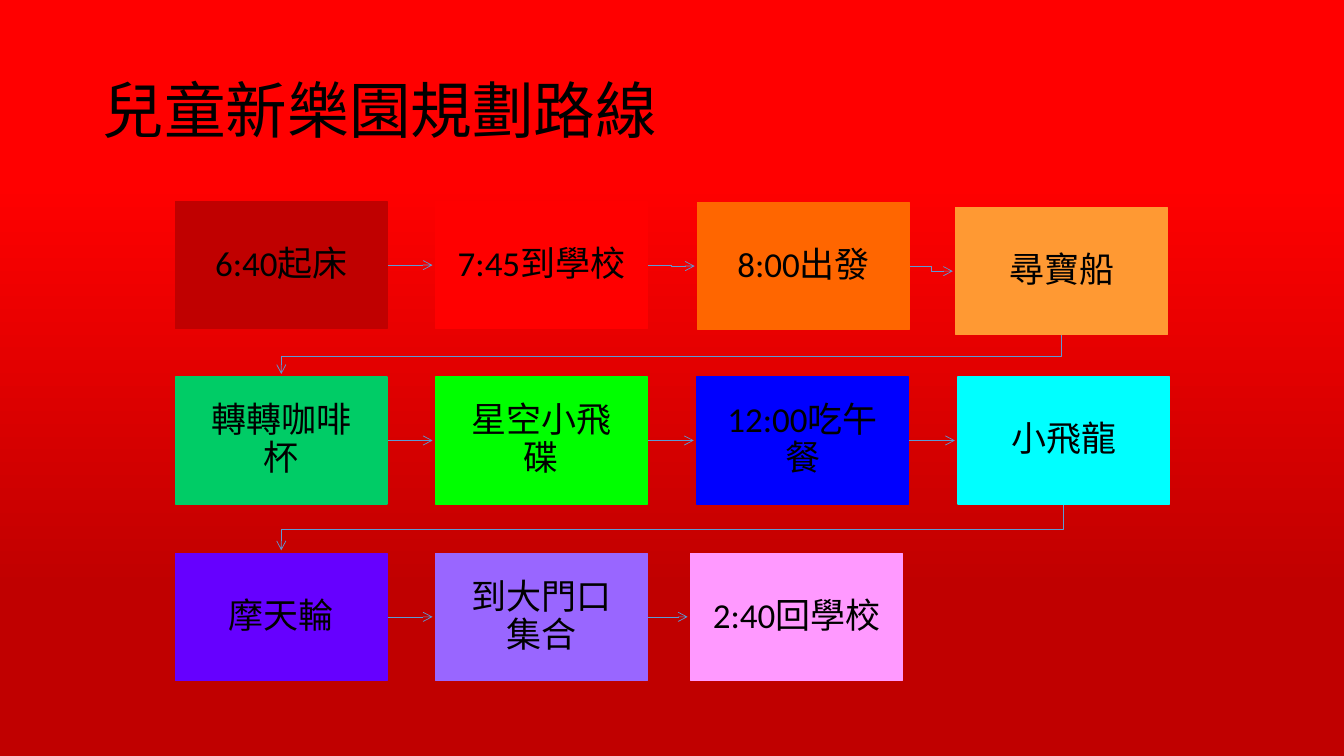
from dataclasses import dataclass
from itertools import pairwise

from lxml import etree
from pptx import Presentation
from pptx.dml.color import RGBColor
from pptx.enum.shapes import MSO_CONNECTOR, MSO_SHAPE
from pptx.enum.text import MSO_ANCHOR, PP_ALIGN
from pptx.oxml.ns import qn
from pptx.util import Inches, Pt

RECTANGLE = MSO_SHAPE.RECTANGLE
STRAIGHT, ELBOW = MSO_CONNECTOR.STRAIGHT, MSO_CONNECTOR.ELBOW
MIDDLE = MSO_ANCHOR.MIDDLE
LEFT, CENTER = PP_ALIGN.LEFT, PP_ALIGN.CENTER

FONT = "Calibri"
BLACK = RGBColor(0x00, 0x00, 0x00)
ARROW_BLUE = RGBColor(0x5B, 0x9B, 0xD5)
BRIGHT_RED = RGBColor(0xFF, 0x00, 0x00)
DARK_RED = RGBColor(0xC0, 0x00, 0x00)
ORANGE = RGBColor(0xFF, 0x66, 0x00)
LIGHT_ORANGE = RGBColor(0xFF, 0x99, 0x33)
SEA_GREEN = RGBColor(0x00, 0xCC, 0x66)
LIME = RGBColor(0x00, 0xFF, 0x00)
BLUE = RGBColor(0x00, 0x00, 0xFF)
CYAN = RGBColor(0x00, 0xFF, 0xFF)
VIOLET = RGBColor(0x66, 0x00, 0xFF)
LAVENDER = RGBColor(0x99, 0x66, 0xFF)
PINK = RGBColor(0xFF, 0x99, 0xFF)

COLUMN_LEFTS = (1.74, 4.32, 6.91, 9.5)
ROW_TOPS = (2.0, 3.74, 5.49)
BOX_WIDTH, BOX_HEIGHT = 2.1, 1.26
BOX_INSET = 0.19
ARROW_GAP = 0.03


@dataclass(frozen=True)
class Stop:
    label: str
    color: RGBColor
    row: int
    column: int
    shift_x: float = 0
    shift_y: float = 0

    @property
    def left(self) -> float:
        return COLUMN_LEFTS[self.column] + self.shift_x

    @property
    def top(self) -> float:
        return ROW_TOPS[self.row] + self.shift_y

    @property
    def center_x(self) -> float:
        return self.left + BOX_WIDTH / 2

    @property
    def center_y(self) -> float:
        return self.top + BOX_HEIGHT / 2


ROUTE = (
    Stop("6:40起床", DARK_RED, 0, 0),
    Stop("7:45到學校", BRIGHT_RED, 0, 1),
    Stop("8:00出發", ORANGE, 0, 2, 0.01, 0.01),
    Stop("尋寶船", LIGHT_ORANGE, 0, 3, -0.02, 0.06),
    Stop("轉轉咖啡杯", SEA_GREEN, 1, 0),
    Stop("星空小飛碟", LIME, 1, 1),
    Stop("12:00吃午餐", BLUE, 1, 2),
    Stop("小飛龍", CYAN, 1, 3),
    Stop("摩天輪", VIOLET, 2, 0),
    Stop("到大門口集合", LAVENDER, 2, 1),
    Stop("2:40回學校", PINK, 2, 2, -0.06),
)


def write_text(shape, text: str, size: float, align) -> None:
    frame = shape.text_frame
    frame.word_wrap = True
    frame.vertical_anchor = MIDDLE
    frame.text = text
    para = frame.paragraphs[0]
    para.alignment = align
    para.line_spacing = 0.9
    for span in para.runs:
        span.font.name = FONT
        span.font.size = Pt(size)
        span.font.color.rgb = BLACK


def style_arrow(arrow) -> None:
    arrow.line.color.rgb = ARROW_BLUE
    arrow.line.width = Pt(0.5)
    etree.SubElement(arrow.line._get_or_add_ln(), qn("a:tailEnd"), type="arrow")


def draw_side_arrow(page, start: Stop, end: Stop) -> None:
    kind = STRAIGHT if start.center_y == end.center_y else ELBOW
    arrow = page.shapes.add_connector(
        kind,
        Inches(start.left + BOX_WIDTH), Inches(start.center_y),
        Inches(end.left - ARROW_GAP), Inches(end.center_y),
    )
    style_arrow(arrow)
    etree.SubElement(arrow._element.spPr, qn("a:effectLst"))


def draw_return_arrow(page, start: Stop, end: Stop) -> None:
    bottom = start.top + BOX_HEIGHT
    tip = end.top - ARROW_GAP
    turn = (bottom + tip) / 2 + 0.02
    builder = page.shapes.build_freeform(Inches(start.center_x), Inches(bottom))
    corners = ((start.center_x, turn), (end.center_x, turn), (end.center_x, tip))
    builder.add_line_segments([(Inches(x), Inches(y)) for x, y in corners], close=False)
    arrow = builder.convert_to_shape()
    arrow.fill.background()
    style_arrow(arrow)
    arrow.shadow.inherit = False


def draw_stop(page, stop: Stop) -> None:
    box = page.shapes.add_shape(
        RECTANGLE, Inches(stop.left), Inches(stop.top),
        Inches(BOX_WIDTH), Inches(BOX_HEIGHT),
    )
    box.shadow.inherit = False
    box.fill.solid()
    box.fill.fore_color.rgb = stop.color
    box.line.color.rgb = stop.color
    box.line.width = Pt(1)
    frame = box.text_frame
    frame.margin_left = frame.margin_right = Inches(BOX_INSET)
    frame.margin_top = frame.margin_bottom = Inches(BOX_INSET)
    write_text(box, stop.label, 25, CENTER)


def paint_background(page) -> None:
    fill = page.background.fill
    fill.gradient()
    fill.gradient_angle = 270
    shades = ((0.24, BRIGHT_RED), (0.78, DARK_RED))
    for gradient_stop, (position, color) in zip(fill.gradient_stops, shades):
        gradient_stop.position = position
        gradient_stop.color.rgb = color


def main() -> None:
    deck = Presentation()
    deck.slide_width, deck.slide_height = Inches(13.33), Inches(7.5)
    page = deck.slides.add_slide(deck.slide_layouts[6])
    paint_background(page)

    # Title
    title = page.shapes.add_textbox(Inches(0.92), Inches(0.4), Inches(11.5), Inches(1.45))
    write_text(title, "兒童新樂園規劃路線", 44, LEFT)

    # Arrows along the route
    for start, end in pairwise(ROUTE):
        draw_arrow = draw_side_arrow if start.row == end.row else draw_return_arrow
        draw_arrow(page, start, end)

    # Stops
    for stop in ROUTE:
        draw_stop(page, stop)

    deck.save("out.pptx")


if __name__ == "__main__":
    main()
